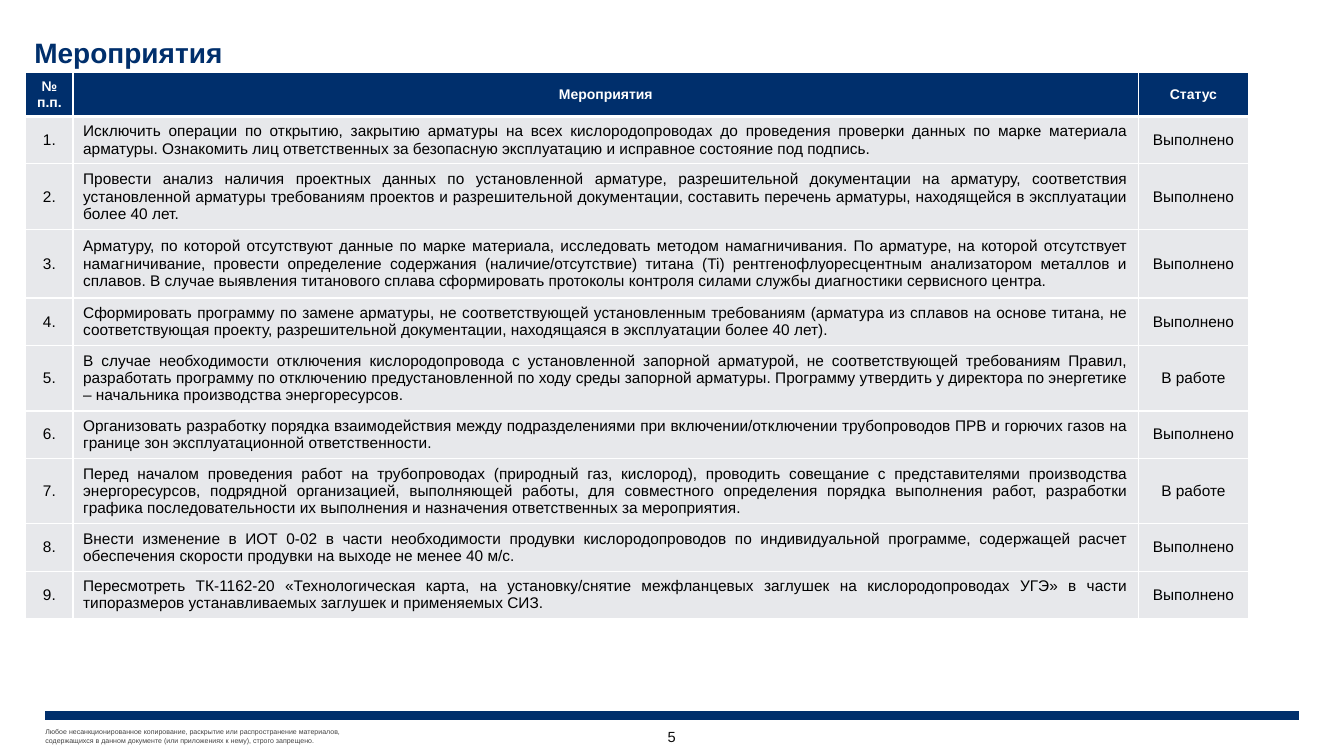
from lxml import etree
from pptx import Presentation
from pptx.dml.color import RGBColor
from pptx.enum.shapes import MSO_CONNECTOR
from pptx.enum.text import MSO_ANCHOR, PP_ALIGN
from pptx.oxml.ns import qn
from pptx.util import Pt

NAVY = RGBColor(0x00, 0x2F, 0x6C)
PALE = RGBColor(0xE7, 0xE8, 0xEB)
WHITE = RGBColor(0xFF, 0xFF, 0xFF)
BLACK = RGBColor(0x00, 0x00, 0x00)
GRAY = RGBColor(0x40, 0x40, 0x40)
DARK = RGBColor(0x0D, 0x0D, 0x0D)
LEFT, CENTER, JUST = PP_ALIGN.LEFT, PP_ALIGN.CENTER, PP_ALIGN.JUSTIFY
MIDDLE = MSO_ANCHOR.MIDDLE
STRAIGHT = MSO_CONNECTOR.STRAIGHT

DONE, OPEN = "Выполнено", "В работе"
HEADS = ("№ п.п.", "Мероприятия", "Статус")
HEAD_H = 30.5
# Row height, task, status
TASKS = [
    (33.8, "Исключить операции по открытию, закрытию арматуры на всех кислородопроводах до проведения проверки данных по марке материала арматуры. Ознакомить лиц ответственных за безопасную эксплуатацию и исправное состояние под подпись.", DONE),
    (46.5, "Провести анализ наличия проектных данных по установленной арматуре, разрешительной документации на арматуру, соответствия установленной арматуры требованиям проектов и разрешительной документации, составить перечень арматуры, находящейся в эксплуатации более 40 лет.", DONE),
    (49, "Арматуру, по которой отсутствуют данные по марке материала, исследовать методом намагничивания. По арматуре, на которой отсутствует намагничивание, провести определение содержания (наличие/отсутствие) титана (Ti) рентгенофлуоресцентным анализатором металлов и сплавов. В случае выявления титанового сплава сформировать протоколы контроля силами службы диагностики сервисного центра.", DONE),
    (33.8, "Сформировать программу по замене арматуры, не соответствующей установленным требованиям (арматура из сплавов на основе титана, не соответствующая проекту, разрешительной документации, находящаяся в эксплуатации более 40 лет).", DONE),
    (46.5, "В случае необходимости отключения кислородопровода с установленной запорной арматурой, не соответствующей требованиям Правил, разработать программу по отключению предустановленной по ходу среды запорной арматуры. Программу утвердить у директора по энергетике – начальника производства энергоресурсов.", OPEN),
    (33.8, "Организовать разработку порядка взаимодействия между подразделениями при включении/отключении трубопроводов ПРВ и горючих газов на границе зон эксплуатационной ответственности.", DONE),
    (46.5, "Перед началом проведения работ на трубопроводах (природный газ, кислород), проводить совещание с представителями производства энергоресурсов, подрядной организацией, выполняющей работы, для совместного определения порядка выполнения работ, разработки графика последовательности их выполнения и назначения ответственных за мероприятия.", OPEN),
    (33.8, "Внести изменение в ИОТ 0-02 в части необходимости продувки кислородопроводов по индивидуальной программе, содержащей расчет обеспечения скорости продувки на выходе не менее 40 м/с.", DONE),
    (33.8, "Пересмотреть ТК-1162-20 «Технологическая карта, на установку/снятие межфланцевых заглушек на кислородопроводах УГЭ» в части типоразмеров устанавливаемых заглушек и применяемых СИЗ.", DONE),
]


def style(para, text, size, color, align, bold=False):
    para.text = text
    para.alignment = align
    font = para.font
    font.name, font.size, font.bold = "Arial", Pt(size), bold
    font.color.rgb = color


def label(box, text, size, color, align, bold=False, top=0):
    frame = slide.shapes.add_textbox(*map(Pt, box)).text_frame
    frame.word_wrap = True
    frame.vertical_anchor = MIDDLE
    frame.margin_left = frame.margin_right = frame.margin_bottom = 0
    frame.margin_top = Pt(top)
    style(frame.paragraphs[0], text, size, color, align, bold)
    return frame.paragraphs[0]


deck = Presentation()
deck.slide_width, deck.slide_height = Pt(960), Pt(540)
slide = deck.slides.add_slide(deck.slide_layouts[6])

# Footer note and rule
label((32.4, 519.8, 368.6, 12.2),
      "Любое несанкционированное копирование, раскрытие или распространение материалов,\v"
      "содержащихся в данном документе (или приложениях к нему), строго запрещено.",
      5, GRAY, LEFT)
rule = slide.shapes.add_connector(STRAIGHT, Pt(32.4), Pt(511.2), Pt(928), Pt(511.2))
rule.line.color.rgb = NAVY
rule.line.width = Pt(6)
etree.SubElement(rule.element.spPr, qn("a:effectLst"))

# Task table
rows = [(HEAD_H, *HEADS)]
rows += [(high, f"{num}.", task, state)
         for num, (high, task, state) in enumerate(TASKS, 1)]
total = sum(row[0] for row in rows)
table = slide.shapes.add_table(len(rows), 3, Pt(18.4), Pt(52),
                               Pt(873.4), Pt(total)).table
for col, width in zip(table.columns, (33.8, 761, 78.6)):
    col.width = Pt(width)

for r, (high, *texts) in enumerate(rows):
    table.rows[r].height = Pt(high)
    head = r == 0
    for c, text in enumerate(texts):
        cell = table.cell(r, c)
        cell.vertical_anchor = MIDDLE
        align = JUST if c == 1 and not head else CENTER
        style(cell.text_frame.paragraphs[0], text, 10 if head else 11,
              WHITE if head else BLACK, align, head)
        # Cell borders come before the fill
        props = cell._tc.get_or_add_tcPr()
        for side in "LRTB":
            thick = (head and side == "B") or (r == 1 and side == "T")
            edge = etree.SubElement(props, qn(f"a:ln{side}"),
                                    w=str(Pt(3 if thick else 1)))
            fill = etree.SubElement(edge, qn("a:solidFill"))
            etree.SubElement(fill, qn("a:srgbClr"), val=str(WHITE))
        cell.fill.solid()
        cell.fill.fore_color.rgb = NAVY if head else PALE

# Title and page number
title = label((24.5, 25.9, 817.2, 23.8), "Мероприятия", 20, NAVY, LEFT, True, 2.9)
title.line_spacing = 0.85
label((454.3, 517, 51.1, 18), "5", 10.5, DARK, CENTER)

deck.save("out.pptx")
